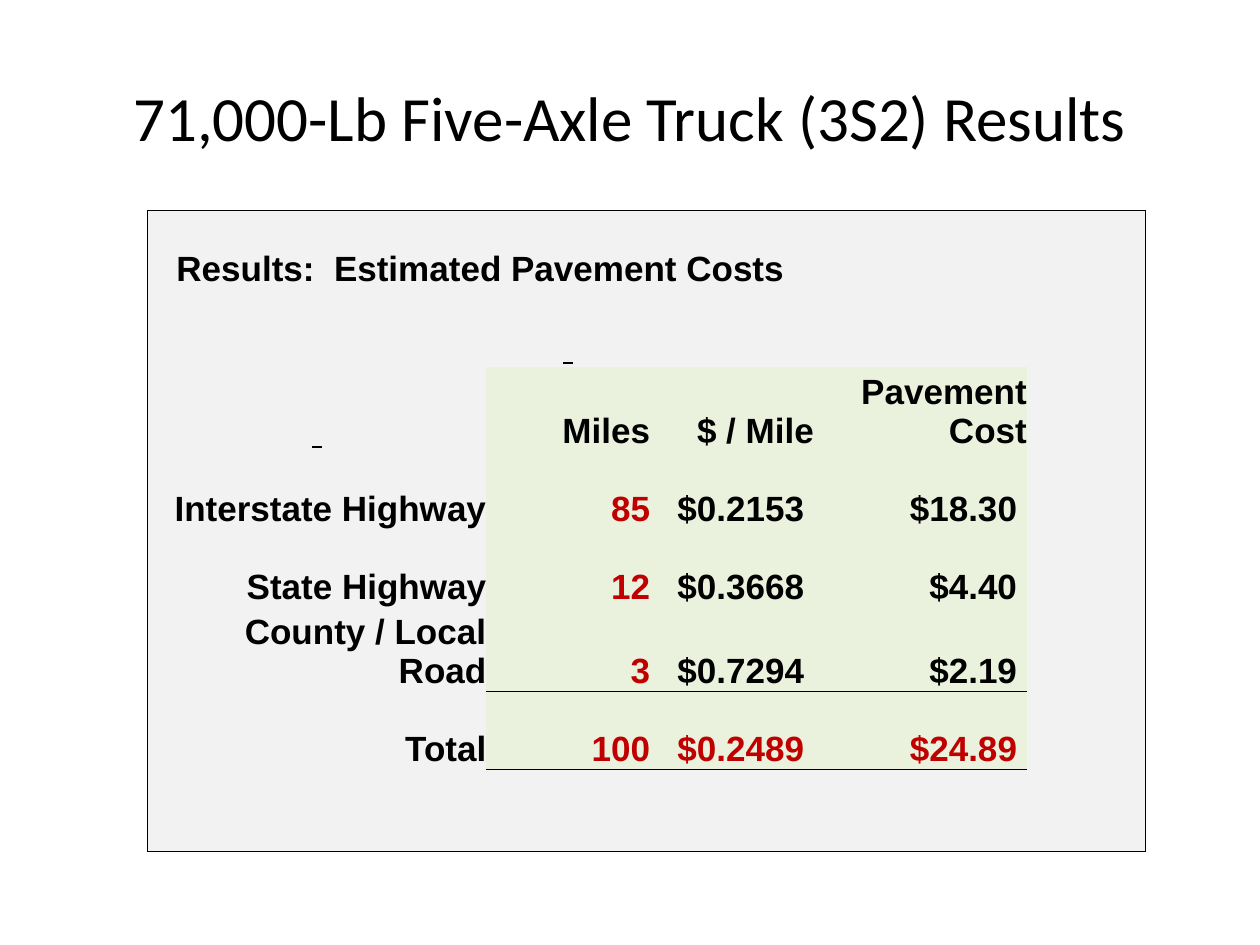
from lxml.etree import SubElement
from pptx import Presentation
from pptx.dml.color import RGBColor
from pptx.enum.text import MSO_ANCHOR as Anchor, PP_ALIGN as Align
from pptx.oxml.ns import qn
from pptx.util import Inches, Pt

COLORS = {"ink": "000000", "red": "C00000", "panel": "F2F2F2", "data": "EAF1DD"}
TITLE = "71,000-Lb Five-Axle Truck (3S2) Results"
HEADING = "Results:  Estimated Pavement Costs"
BLANK = " "  # an underlined space, which shows as a short dash
ROWS = [
    [HEADING, "", "", "", ""],
    ["", BLANK, "", "", ""],
    [BLANK, "Miles", "$ / Mile", "Pavement Cost", ""],
    ["Interstate Highway", "85", "$0.2153 ", "$18.30 ", ""],
    ["State Highway", "12", "$0.3668 ", "$4.40 ", ""],
    ["County / Local Road", "3", "$0.7294 ", "$2.19 ", ""],
    ["Total", "100", "$0.2489 ", "$24.89 ", ""],
    ["", "", "", "", ""],
]
COLUMN_WIDTHS = [2.69, 1.3, 1.3, 1.69, 0.94]
ROW_HEIGHTS = [0.62] * 7 + [0.65]
TABLE_LEFT, TABLE_TOP = 1.17, 1.67
HEADING_INDENT = 0.23
HEADER_ROW, TOTAL_ROW = 2, 6
LAST_ROW, LAST_COLUMN = len(ROWS) - 1, len(COLUMN_WIDTHS) - 1
NO_STYLE = "{2D5ABB26-0587-4C30-8999-92F81FD0307C}"


def rgb(name):
    return RGBColor.from_string(COLORS[name])


def style_font(paragraph, name, size, color, bold=False):
    font = paragraph.font
    font.name, font.size, font.bold = name, Pt(size), bold
    font.color.rgb = rgb(color)


def add_borders(cell, sides):
    properties = cell._tc.get_or_add_tcPr()
    for side in sides:
        line = SubElement(properties, qn(f"a:ln{side}"), w=str(Pt(0.5)))
        fill = SubElement(line, qn("a:solidFill"))
        SubElement(fill, qn("a:srgbClr"), val=COLORS["ink"])


def border_sides(row, column, in_data):
    """Outer frame plus the rule above the totals, in schema order L, R, T, B."""
    rules = {
        "L": column == 0,
        "R": column == LAST_COLUMN,
        "T": row == 0 or (in_data and row == TOTAL_ROW),
        "B": row == LAST_ROW or (in_data and row == TOTAL_ROW - 1),
    }
    return [side for side, drawn in rules.items() if drawn]


def fill_cell(cell, row, column, text):
    in_data = HEADER_ROW <= row <= TOTAL_ROW and 0 < column < LAST_COLUMN
    add_borders(cell, border_sides(row, column, in_data))
    cell.fill.solid()
    cell.fill.fore_color.rgb = rgb("data" if in_data else "panel")
    cell.vertical_anchor = Anchor.BOTTOM
    cell.margin_left = cell.margin_right = cell.margin_top = cell.margin_bottom = 0

    para = cell.text_frame.paragraphs[0]
    is_result = in_data and row > HEADER_ROW and (column == 1 or row == TOTAL_ROW)
    style_font(para, "Arial", 20, "red" if is_result else "ink", bold=True)
    para.alignment = Align.RIGHT
    if text:
        span = para.add_run()
        span.text = text
        if text == BLANK:
            para.alignment = Align.CENTER
            span.font.underline = True
    if text == HEADING:
        para.alignment = Align.LEFT
        cell.margin_left = Inches(HEADING_INDENT)


def add_title(page):
    box = page.shapes.add_textbox(Inches(0.5), Inches(0.3), Inches(9), Inches(1.25))
    frame = box.text_frame
    frame.word_wrap = True
    frame.vertical_anchor = Anchor.MIDDLE
    para = frame.paragraphs[0]
    para.text = TITLE
    para.alignment = Align.CENTER
    style_font(para, "Calibri", 36, "ink")


def add_cost_table(page):
    table = page.shapes.add_table(
        len(ROWS), len(COLUMN_WIDTHS), Inches(TABLE_LEFT), Inches(TABLE_TOP),
        Inches(sum(COLUMN_WIDTHS)), Inches(sum(ROW_HEIGHTS)),
    ).table
    table.first_row = table.horz_banding = False
    table._tbl.tblPr.find(qn("a:tableStyleId")).text = NO_STYLE
    for column, width in zip(table.columns, COLUMN_WIDTHS):
        column.width = Inches(width)
    for row, height in zip(table.rows, ROW_HEIGHTS):
        row.height = Inches(height)
    for row, texts in enumerate(ROWS):
        for column, text in enumerate(texts):
            fill_cell(table.cell(row, column), row, column, text)
    table.cell(0, 0).merge(table.cell(0, 2))


deck = Presentation()
deck.slide_width, deck.slide_height = Inches(10), Inches(7.5)
page = deck.slides.add_slide(deck.slide_layouts[6])
add_title(page)
add_cost_table(page)
deck.save("out.pptx")
